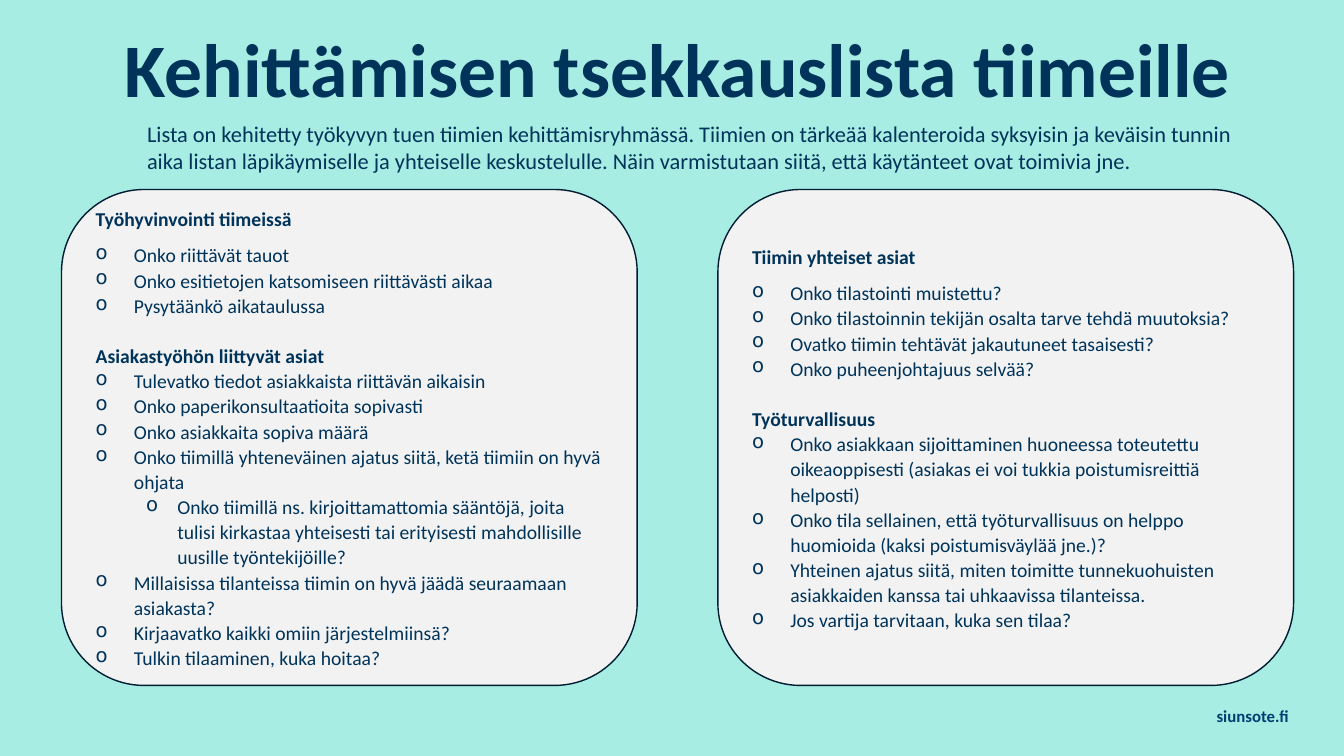
import pptx
import pptx.util
import pptx.dml.color
import pptx.enum.shapes
import pptx.enum.text
import pptx.oxml.ns
from dataclasses import dataclass
from lxml import etree
from pptx.util import Inches, Pt


@dataclass(frozen=True)
class Theme:
    font: str = "Calibri"
    background: str = "A8EDE3"
    card: str = "F2F2F2"
    outline: str = "001C32"
    ink: str = "003359"
    footer_ink: str = "003F71"
    title_size: int = 54
    intro_size: int = 16
    card_size: int = 14
    footer_size: int = 12
    line_spacing: float = 1.07
    gap_after: int = 8
    section_gap: int = 18


THEME = Theme()
INDENTS = {0: (0.38, -0.38), 1: (0.81, -0.31)}

WELLBEING = [
    ("Työhyvinvointi tiimeissä", [
        (0, "Onko riittävät tauot"),
        (0, "Onko esitietojen katsomiseen riittävästi aikaa"),
        (0, "Pysytäänkö aikataulussa"),
    ]),
    ("Asiakastyöhön liittyvät asiat", [
        (0, "Tulevatko tiedot asiakkaista riittävän aikaisin"),
        (0, "Onko paperikonsultaatioita sopivasti"),
        (0, "Onko asiakkaita sopiva määrä"),
        (0, "Onko tiimillä yhteneväinen ajatus siitä, ketä tiimiin on hyvä ohjata"),
        (1, "Onko tiimillä ns. kirjoittamattomia sääntöjä, joita tulisi kirkastaa "
            "yhteisesti tai erityisesti mahdollisille uusille työntekijöille?"),
        (0, "Millaisissa tilanteissa tiimin on hyvä jäädä seuraamaan asiakasta?"),
        (0, "Kirjaavatko kaikki omiin järjestelmiinsä?"),
        (0, "Tulkin tilaaminen, kuka hoitaa?"),
    ]),
]
TEAM = [
    ("Tiimin yhteiset asiat", [
        (0, "Onko tilastointi muistettu?"),
        (0, "Onko tilastoinnin tekijän osalta tarve tehdä muutoksia?"),
        (0, "Ovatko tiimin tehtävät jakautuneet tasaisesti?"),
        (0, "Onko puheenjohtajuus selvää?"),
    ]),
    ("Työturvallisuus", [
        (0, "Onko asiakkaan sijoittaminen huoneessa toteutettu oikeaoppisesti "
            "(asiakas ei voi tukkia poistumisreittiä helposti)"),
        (0, "Onko tila sellainen, että työturvallisuus on helppo huomioida "
            "(kaksi poistumisväylää jne.)?"),
        (0, "Yhteinen ajatus siitä, miten toimitte tunnekuohuisten asiakkaiden "
            "kanssa tai uhkaavissa tilanteissa."),
        (0, "Jos vartija tarvitaan, kuka sen tilaa?"),
    ]),
]
INTRO = (
    "Lista on kehitetty työkyvyn tuen tiimien kehittämisryhmässä. Tiimien on tärkeää "
    "kalenteroida syksyisin ja keväisin tunnin aika listan läpikäymiselle ja yhteiselle "
    "keskustelulle. Näin varmistutaan siitä, että käytänteet ovat toimivia jne."
)


def rgb(value):
    return pptx.dml.color.RGBColor.from_string(value)


def write(paragraph, text, size, color=THEME.ink, bold=False,
          align=pptx.enum.text.PP_ALIGN.LEFT):
    paragraph.text = text
    paragraph.alignment = align
    font = paragraph.runs[0].font
    font.name, font.size, font.bold = THEME.font, Pt(size), bold
    font.color.rgb = rgb(color)


def add_line(slide, box, text, size, **style):
    frame = slide.shapes.add_textbox(*map(Inches, box)).text_frame
    frame.word_wrap = True
    write(frame.paragraphs[0], text, size, **style)


def add_bullet(paragraph, level):
    margin, hanging = INDENTS[level]
    properties = paragraph._p.get_or_add_pPr()
    properties.set("marL", str(Inches(margin)))
    properties.set("indent", str(Inches(hanging)))
    bullet = etree.SubElement(properties, pptx.oxml.ns.qn("a:buChar"))
    bullet.set("char", "o")
    paragraph.level = level


def add_checklist_card(slide, box, sections):
    card = slide.shapes.add_shape(
        pptx.enum.shapes.MSO_SHAPE.ROUNDED_RECTANGLE, *map(Inches, box))
    card.shadow.inherit = False
    card.fill.solid()
    card.fill.fore_color.rgb = rgb(THEME.card)
    card.line.color.rgb = rgb(THEME.outline)
    card.line.width = Pt(1)
    frame = card.text_frame
    frame.word_wrap = True
    frame.vertical_anchor = pptx.enum.text.MSO_ANCHOR.MIDDLE
    for index, (heading, questions) in enumerate(sections):
        title = frame.add_paragraph() if index else frame.paragraphs[0]
        write(title, heading, THEME.card_size, bold=True)
        title.space_before = Pt(THEME.section_gap if index else 0)
        title.space_after = Pt(0 if index else THEME.gap_after)
        for level, question in questions:
            item = frame.add_paragraph()
            add_bullet(item, level)
            write(item, question, THEME.card_size)
    for paragraph in frame.paragraphs:
        paragraph.line_spacing = THEME.line_spacing
    frame.paragraphs[-1].space_after = Pt(THEME.gap_after)


def build_checklist_slide(deck):
    slide = deck.slides.add_slide(deck.slide_layouts[6])
    slide.background.fill.solid()
    slide.background.fill.fore_color.rgb = rgb(THEME.background)
    add_line(slide, (8.21, 6.95, 4.67, 0.3), "siunsote.fi", THEME.footer_size,
             color=THEME.footer_ink, bold=True, align=pptx.enum.text.PP_ALIGN.RIGHT)
    add_line(slide, (1.14, 0.17, 11.46, 1.01),
             "Kehittämisen tsekkauslista tiimeille", THEME.title_size, bold=True)
    for left, sections in ((0.61, WELLBEING), (7.12, TEAM)):
        add_checklist_card(slide, (left, 1.88, 5.71, 4.92), sections)
    add_line(slide, (1.36, 1.14, 11.02, 0.94), INTRO, THEME.intro_size)


def main():
    deck = pptx.Presentation()
    deck.slide_width, deck.slide_height = Inches(13.33), Inches(7.5)
    build_checklist_slide(deck)
    deck.save("out.pptx")


if __name__ == "__main__":
    main()
